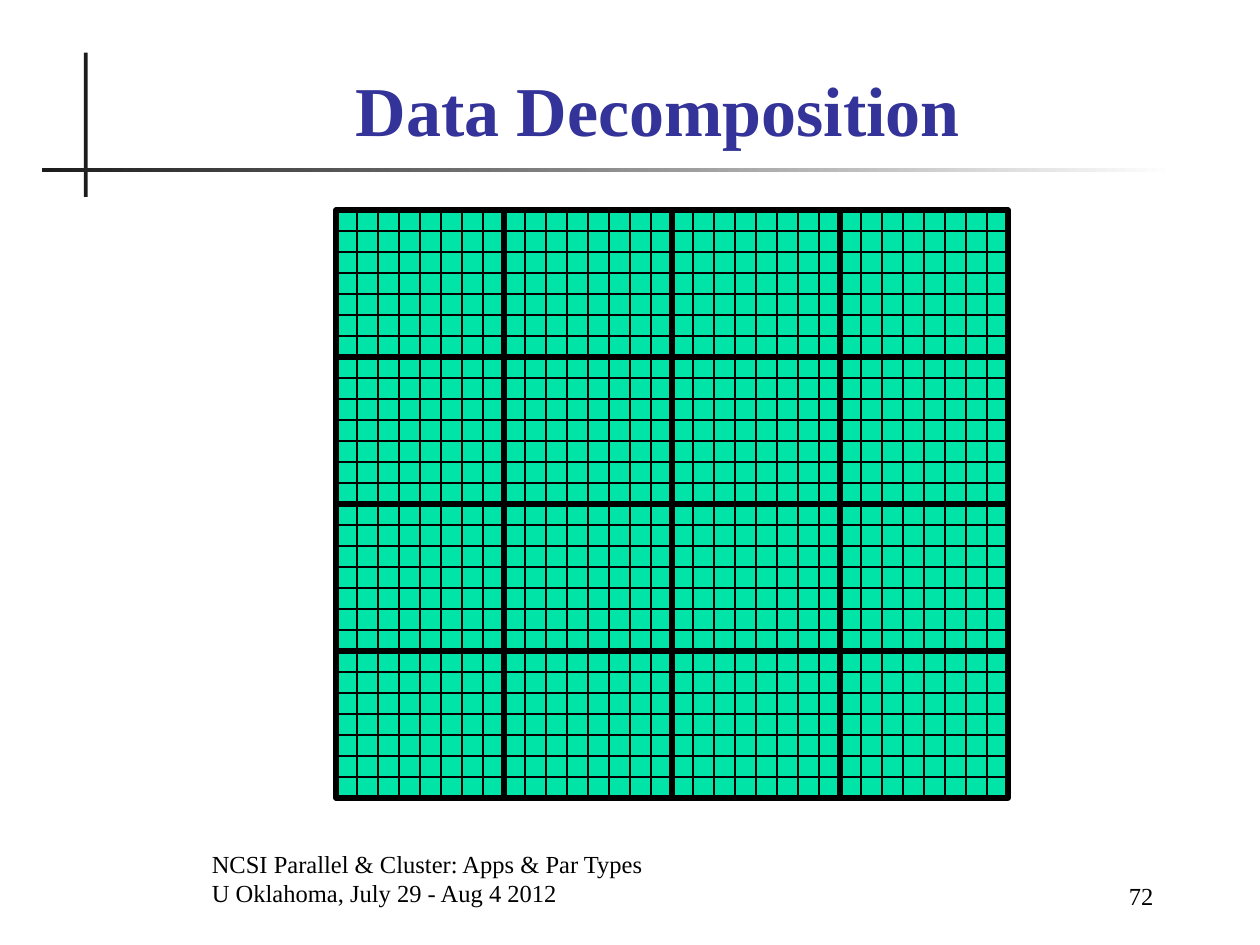
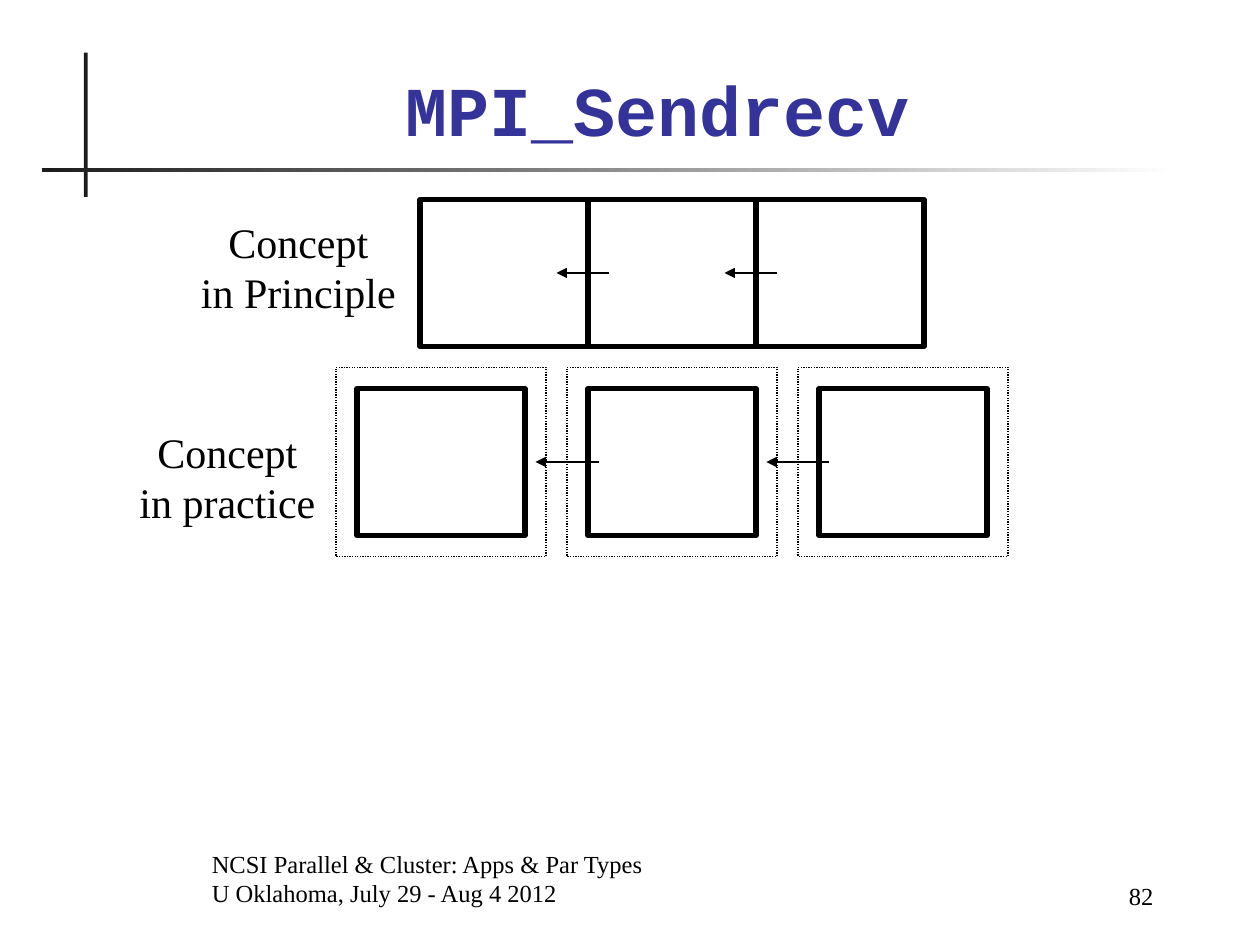
from lxml.etree import SubElement
from pptx import Presentation
from pptx.dml.color import RGBColor
from pptx.enum.dml import MSO_LINE
from pptx.enum.shapes import MSO_CONNECTOR, MSO_SHAPE
from pptx.enum.text import MSO_ANCHOR, PP_ALIGN
from pptx.oxml.ns import qn
from pptx.util import Cm, Pt

COLORS = {"ink": "000000", "title": "333399", "rule": "1C1C1C",
          "paper": "FFFFFF", "field": "00E4A8"}
SERIF = "Times New Roman"
MONO = "Courier New"
CELL = 2.54 / 6
COLS, ROWS = 8, 7
BLOCK_W, BLOCK_H = COLS * CELL, ROWS * CELL
THIN, THICK = 0.75, 3
FOOTER = ["NCSI Parallel & Cluster: Apps & Par Types",
          "U Oklahoma, July 29 - Aug 4 2012"]


def color(name):
    return RGBColor.from_string(COLORS[name])


def add_rect(shapes, box, fill=None, width=None, dash=None):
    rect = shapes.add_shape(MSO_SHAPE.RECTANGLE, *map(Cm, box))
    rect.shadow.inherit = False
    if fill:
        rect.fill.solid()
        rect.fill.fore_color.rgb = color(fill)
    else:
        rect.fill.background()
    if width:
        rect.line.color.rgb = color("ink")
        rect.line.width = Pt(width)
        if dash:
            rect.line.dash_style = dash
    else:
        rect.line.fill.background()
    return rect


def add_line(shapes, start, end, arrow=False):
    line = shapes.add_connector(MSO_CONNECTOR.STRAIGHT, *map(Cm, start + end))
    line.line.color.rgb = color("ink")
    line.line.width = Pt(THIN)
    props = line.element.spPr
    if arrow:
        SubElement(props.find(qn("a:ln")), qn("a:tailEnd"), type="triangle")
    SubElement(props, qn("a:effectLst"))


def add_text(slide, box, lines, size, align=PP_ALIGN.LEFT, anchor=MSO_ANCHOR.BOTTOM,
             font=SERIF, ink="ink", bold=False, wrap=True):
    frame = slide.shapes.add_textbox(*map(Cm, box)).text_frame
    frame.word_wrap = wrap
    frame.vertical_anchor = anchor
    frame.text = "\n".join(lines)
    for para in frame.paragraphs:
        para.alignment = align
        para.line_spacing = Pt(size * 1.2)
        para.font.name = font
        para.font.size = Pt(size)
        para.font.bold = bold
        para.font.color.rgb = color(ink)


def add_base(deck, title, number, font=SERIF):
    slide = deck.slides.add_slide(deck.slide_layouts[6])
    add_rect(slide.shapes, (1.69, 1.06, 0.08, 2.91), "rule")
    band = add_rect(slide.shapes, (0.85, 3.39, 22.86, 0.08), "rule")
    band.fill.gradient()
    band.fill.gradient_angle = 0
    for stop, name in zip(band.fill.gradient_stops, ("rule", "paper")):
        stop.color.rgb = color(name)
    add_text(slide, (2.12, 1.27, 22.28, 1.88), [title], 40, PP_ALIGN.CENTER,
             font=font, ink="title", bold=True)
    add_text(slide, (4.02, 17.15, 15.45, 1.27), FOOTER, 14)
    add_text(slide, (19.9, 17.2, 3.6, 1.27), [str(number)], 14, PP_ALIGN.RIGHT)
    return slide


def add_grid(slide, left, top, count):
    shapes = slide.shapes.add_group_shape().shapes
    width, height = count * BLOCK_W, count * BLOCK_H
    add_rect(shapes, (left, top, width, height), "field", THIN)
    for col in range(1, count * COLS):
        x = left + col * CELL
        add_line(shapes, (x, top), (x, top + height))
    for row in range(1, count * ROWS):
        y = top + row * CELL
        add_line(shapes, (left, y), (left + width, y))
    for row in range(count):
        for col in range(count):
            add_rect(shapes, (left + col * BLOCK_W, top + row * BLOCK_H,
                              BLOCK_W, BLOCK_H), width=THICK)


def add_row(slide, left, top, pitch, reach, halo=False, count=3):
    shapes = slide.shapes.add_group_shape().shapes
    lefts = [left + i * pitch for i in range(count)]
    for x in lefts:
        add_rect(shapes, (x, top, BLOCK_W, BLOCK_H), width=THICK)
        if halo:
            add_rect(shapes, (x - CELL, top - CELL, BLOCK_W + 2 * CELL,
                              BLOCK_H + 2 * CELL), width=THIN, dash=MSO_LINE.ROUND_DOT)
    y = top + BLOCK_H / 2
    for x in lefts[1:]:
        tail, head = reach
        add_line(shapes, (x + tail * CELL, y), (x - head * CELL, y), arrow=True)


def add_label(slide, box, lines):
    add_text(slide, box, lines, 24, PP_ALIGN.CENTER, MSO_ANCHOR.TOP, wrap=False)


def main():
    deck = Presentation()
    deck.slide_width, deck.slide_height = Cm(25.4), Cm(19.05)

    slide = add_base(deck, "Data Decomposition", 72)
    add_grid(slide, 16 * CELL, 10 * CELL, 4)

    slide = add_base(deck, "MPI_Sendrecv", 82, MONO)
    add_row(slide, 20 * CELL, 9.5 * CELL, BLOCK_W, (1, 1.5))
    add_row(slide, 17 * CELL, 18.5 * CELL, BLOCK_W + 3 * CELL, (0.5, 2.5), halo=True)
    add_label(slide, (3.78, 4.23, 4.47, 2.31), ["Concept", "in Principle"])
    add_label(slide, (2.54, 8.47, 4.09, 2.31), ["Concept", "in practice"])

    deck.save("out.pptx")


if __name__ == "__main__":
    main()
